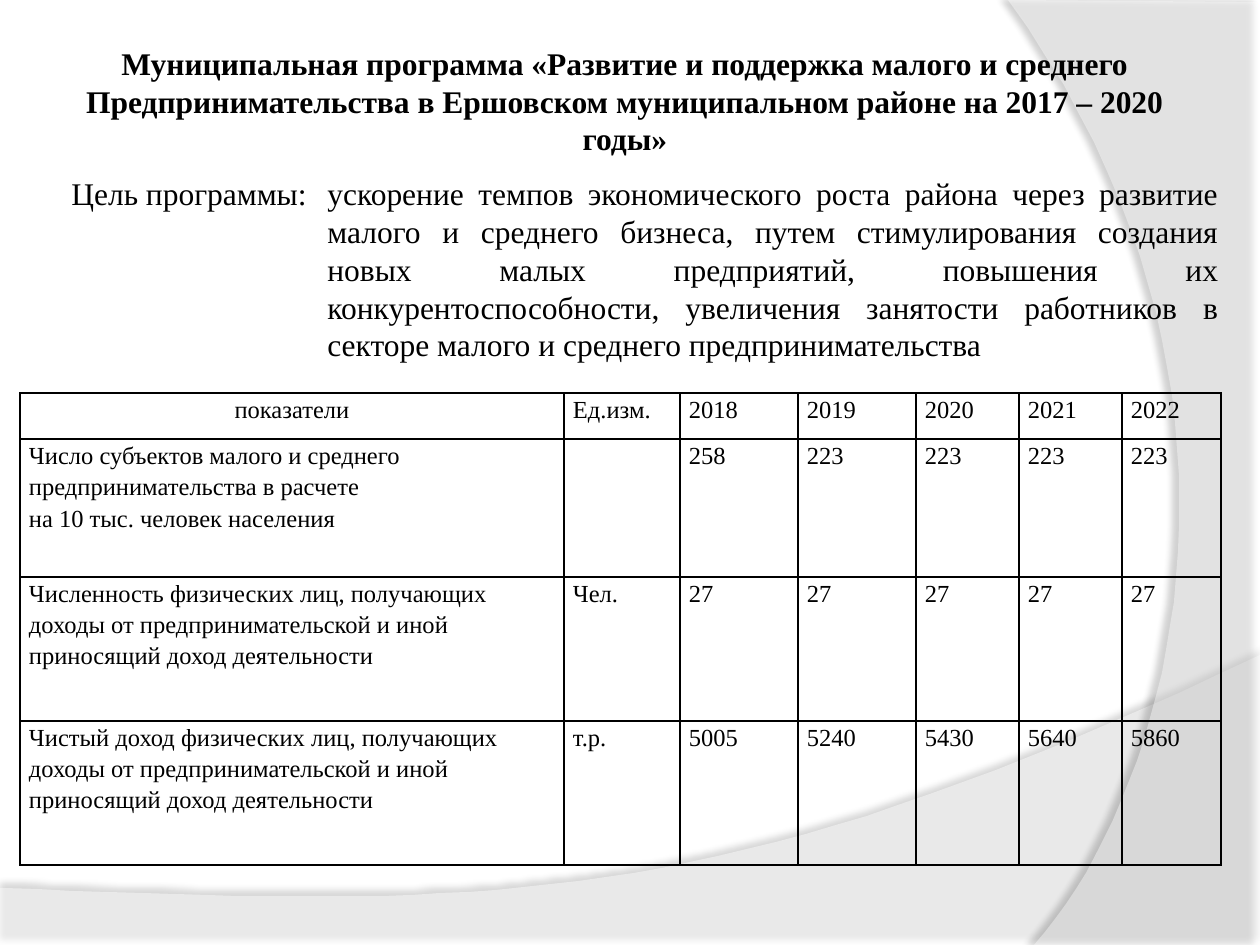
"""Build the slide on the small business support programme with its table of indicators."""
import copy

from lxml import etree
from pptx import Presentation
from pptx import util as u
from pptx.dml.color import RGBColor
from pptx.enum import text
from pptx.oxml import ns

SCALE = u.Inches(1) / 126
BLACK = RGBColor(0, 0, 0)
WHITE = RGBColor(255, 255, 255)
FONT = "Times New Roman"
LEFT, CENTER, JUSTIFY = text.PP_ALIGN.LEFT, text.PP_ALIGN.CENTER, text.PP_ALIGN.JUSTIFY


def px(length):
    return u.Emu(round(length * SCALE))


def write(frame, words, size=18, bold=False, align=LEFT, spacing=None):
    frame.word_wrap = True
    paragraph = frame.paragraphs[0]
    paragraph.text = words
    paragraph.alignment = align
    paragraph.line_spacing = spacing
    for run in paragraph.runs:
        run.font.name = FONT
        run.font.size = u.Pt(size)
        run.font.bold = bold
        run.font.color.rgb = BLACK
    for line_break in paragraph._p.findall(ns.qn("a:br")):
        line_break.append(copy.deepcopy(paragraph.runs[0]._r.rPr))


presentation = Presentation()
presentation.slide_width, presentation.slide_height = px(1260), px(945)
slide = presentation.slides.add_slide(presentation.slide_layouts[6])
slide.background.fill.solid()
slide.background.fill.fore_color.rgb = WHITE

waves = [
    ([(0, 946), (1260, 946)], [(1260, 655), (704, 919), (493, 906), (0, 888)], 45, 35, 3.5, 270),
    ([(1260, 2), (1260, 945)], [(1034, 945), (1178, 780), (1283, 378), (1008, 0)], 40, 45, 4, 180),
]
for corners, controls, opacity, shade, distance, angle in waves:
    curve = []
    for step in range(41):
        t = step / 40
        weights = ((1 - t) ** 3, 3 * t * (1 - t) ** 2, 3 * t * t * (1 - t), t ** 3)
        curve.append(tuple(sum(w * point[axis] for w, point in zip(weights, controls)) for axis in (0, 1)))
    builder = slide.shapes.build_freeform(*corners[0], scale=SCALE)
    builder.add_line_segments(corners[1:] + curve, close=True)
    shape = builder.convert_to_shape()
    shape.shadow.inherit = False
    shape.line.fill.background()
    shape.fill.solid()
    shape.fill.fore_color.rgb = WHITE
    properties = shape._element.spPr
    color = properties.find(ns.qn("a:solidFill"))[0]
    etree.SubElement(color, ns.qn("a:alpha"), val=str(opacity * 1000))
    shadow = etree.SubElement(
        properties.find(ns.qn("a:effectLst")), ns.qn("a:outerShdw"), blurRad=str(u.Pt(4)),
        dist=str(u.Pt(distance)), dir=str(angle * 60000), algn="ctr", rotWithShape="0")
    shadow_color = etree.SubElement(shadow, ns.qn("a:srgbClr"), val=str(BLACK))
    etree.SubElement(shadow_color, ns.qn("a:alpha"), val=str(shade * 1000))

title = slide.shapes.add_textbox(px(39), px(38), px(1172), px(157)).text_frame
title.margin_left = title.margin_right = title.margin_top = px(6)
title.margin_bottom = px(38)
title.vertical_anchor = text.MSO_ANCHOR.MIDDLE
write(title, "Муниципальная программа «Развитие и поддержка малого и среднего\v"
      "Предпринимательства в Ершовском муниципальном районе на 2017 – 2020 годы»",
      bold=True, align=CENTER)

goal = slide.shapes.add_textbox(px(315), px(168), px(916), px(204))
write(goal.text_frame, "ускорение темпов экономического роста района через развитие малого и среднего "
      "бизнеса, путем стимулирования создания новых малых предприятий, повышения их "
      "конкурентоспособности, увеличения занятости работников в секторе малого и среднего "
      "предпринимательства", align=JUSTIFY)
goal_label = slide.shapes.add_textbox(px(59), px(168), px(423), px(50))
write(goal_label.text_frame, "Цель программы:")

rows = [
    ["показатели", "Ед.изм.", "2018", "2019", "2020", "2021", "2022"],
    ["Число субъектов малого и среднего предпринимательства в расчете \vна 10 тыс. человек населения",
     "", "258", "223", "223", "223", "223"],
    ["Численность физических лиц, получающих доходы от предпринимательской и иной "
     "приносящий доход деятельности", "Чел.", "27", "27", "27", "27", "27"],
    ["Чистый доход физических лиц, получающих доходы от предпринимательской и иной "
     "приносящий доход деятельности", "т.р.", "5005", "5240", "5430", "5640", "5860"],
]
widths = [544, 116, 118, 118, 103, 103, 99]
heights = [46, 138, 144, 144]
table = slide.shapes.add_table(
    len(rows), len(widths), px(20), px(393), px(sum(widths)), px(sum(heights))).table
table.first_row = table.horz_banding = False
for column, width in zip(table.columns, widths):
    column.width = px(width)
for row, height, values in zip(table.rows, heights, rows):
    row.height = px(height)
    for cell, value in zip(row.cells, values):
        cell.margin_left = cell.margin_right = px(9)
        cell.margin_top = cell.margin_bottom = 0
        write(cell.text_frame, value, size=14, align=CENTER if value == "показатели" else LEFT, spacing=1.15)
        cell.fill.background()
        for position, side in enumerate(("lnL", "lnR", "lnT", "lnB")):
            border = etree.Element(ns.qn(f"a:{side}"), w=str(u.Pt(1)))
            fill = etree.SubElement(border, ns.qn("a:solidFill"))
            etree.SubElement(fill, ns.qn("a:srgbClr"), val=str(BLACK))
            cell._tc.tcPr.insert(position, border)

presentation.save("out.pptx")
